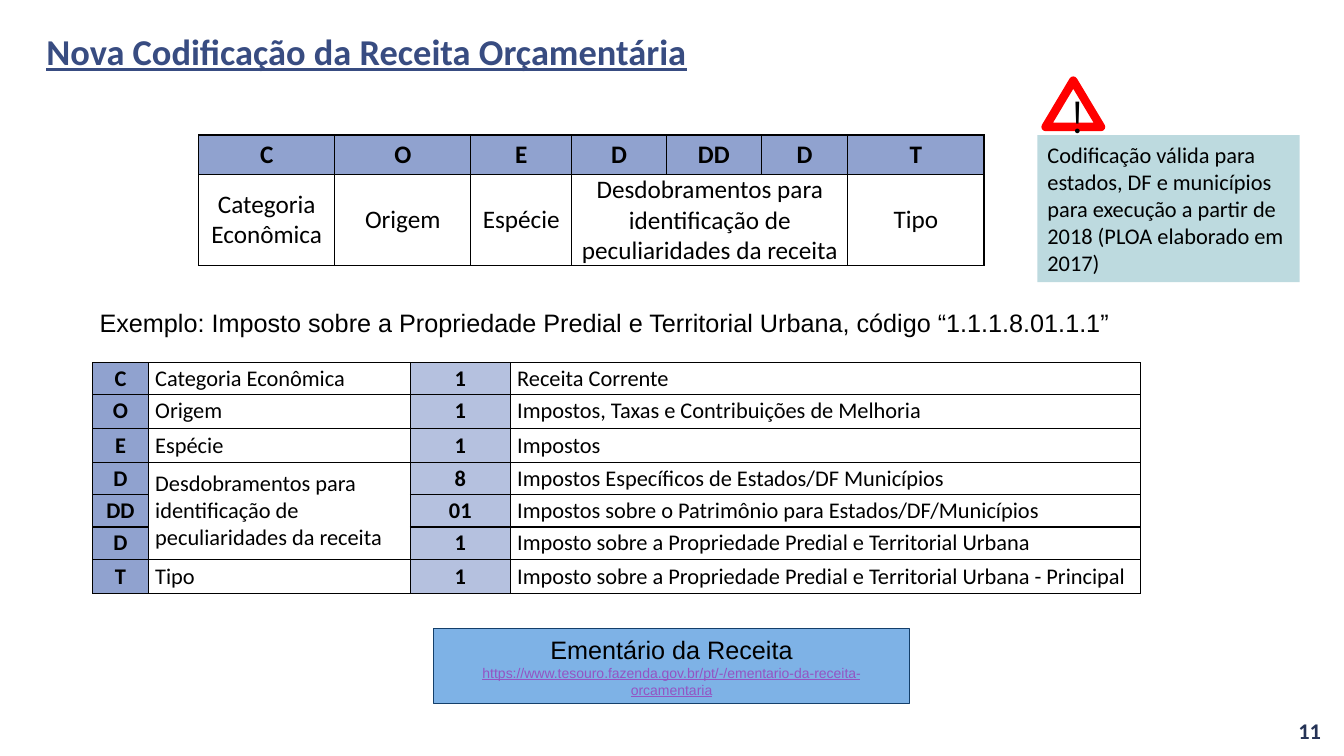
from lxml import etree
from pptx import Presentation
from pptx.dml.color import RGBColor
from pptx.enum.shapes import MSO_SHAPE
from pptx.enum.text import MSO_ANCHOR, PP_ALIGN
from pptx.oxml.ns import qn
from pptx.util import Emu, Pt

EMU_PER_PX = 9144
LEFT, CENTER, RIGHT, JUSTIFY = PP_ALIGN.LEFT, PP_ALIGN.CENTER, PP_ALIGN.RIGHT, PP_ALIGN.JUSTIFY
TOP, MIDDLE = MSO_ANCHOR.TOP, MSO_ANCHOR.MIDDLE
RECTANGLE, TRIANGLE = MSO_SHAPE.RECTANGLE, MSO_SHAPE.ISOSCELES_TRIANGLE
TITLE_ONLY = 5

COLORS = {
    "black": "000000",
    "white": "FFFFFF",
    "title": "384C81",
    "number": "253356",
    "code": "90A2CF",
    "value": "B5C1DF",
    "note": "BDDADF",
    "source": "7EB2E6",
    "source_line": "143F6A",
    "link": "9454C3",
    "warning": "FF0000",
}

BREAKDOWN = "Desdobramentos para\nidentificação de\npeculiaridades da receita"
CODES = ["C", "O", "E", "D", "DD", "D", "T"]
MEANINGS = ["Categoria Econômica", "Origem", "Espécie", BREAKDOWN, "", "", "Tipo"]
EXAMPLE_VALUES = ["1", "1", "1", "8", "01", "1", "1"]
EXAMPLE_NAMES = [
    "Receita Corrente",
    "Impostos, Taxas e Contribuições de Melhoria",
    "Impostos",
    "Impostos Específicos de Estados/DF Municípios",
    "Impostos sobre o Patrimônio para Estados/DF/Municípios",
    "Imposto sobre a Propriedade Predial e Territorial Urbana",
    "Imposto sobre a Propriedade Predial e Territorial Urbana - Principal",
]


def px(value):
    return Emu(value * EMU_PER_PX)


def rgb(name):
    return RGBColor.from_string(COLORS[name])


def format_paragraph(paragraph, size, font="Calibri", color="black", bold=False,
                     underline=False, align=LEFT):
    paragraph.alignment = align
    for run in paragraph.runs:
        run.font.name = font
        run.font.size = Pt(size)
        run.font.bold = bold
        run.font.underline = underline
        run.font.color.rgb = rgb(color)


def write_text(text_frame, text, size, anchor=TOP, **style):
    text_frame.text = text
    text_frame.word_wrap = True
    text_frame.vertical_anchor = anchor
    for paragraph in text_frame.paragraphs:
        format_paragraph(paragraph, size, **style)


def add_text(shapes, box, text, size, **style):
    shape = shapes.add_textbox(*map(px, box))
    write_text(shape.text_frame, text, size, **style)


def add_shape(shapes, kind, box, fill, line=None, line_width=0):
    shape = shapes.add_shape(kind, *map(px, box))
    shape.shadow.inherit = False
    shape.fill.solid()
    shape.fill.fore_color.rgb = rgb(fill)
    if line:
        shape.line.color.rgb = rgb(line)
        shape.line.width = Pt(line_width)
    else:
        shape.line.fill.background()
    return shape


def add_borders(cell):
    properties = cell._tc.get_or_add_tcPr()
    for side in ("lnL", "lnR", "lnT", "lnB"):
        border = etree.SubElement(properties, qn(f"a:{side}"), w=str(Pt(1)))
        fill = etree.SubElement(border, qn("a:solidFill"))
        etree.SubElement(fill, qn("a:srgbClr"), val=COLORS["black"])


def format_cell(cell, text, size, fill, align):
    add_borders(cell)
    cell.margin_left = cell.margin_right = px(7)
    cell.margin_top = cell.margin_bottom = 0
    cell.vertical_anchor = MIDDLE
    if fill:
        cell.fill.solid()
        cell.fill.fore_color.rgb = rgb(fill)
    else:
        cell.fill.background()
    write_text(cell.text_frame, text, size, anchor=MIDDLE, bold=bool(fill), align=align)


def add_table(slide, left, top, widths, heights, rows, size, cell_style):
    frame = slide.shapes.add_table(len(heights), len(widths), px(left), px(top),
                                   px(sum(widths)), px(sum(heights)))
    table = frame.table
    table.first_row = table.horz_banding = False
    for column, width in zip(table.columns, widths):
        column.width = px(width)
    for row, height in zip(table.rows, heights):
        row.height = px(height)
    for row_index, texts in enumerate(rows):
        for column_index, text in enumerate(texts):
            fill, align = cell_style(row_index, column_index)
            format_cell(table.cell(row_index, column_index), text, size, fill, align)
    return table


def structure_style(row, column):
    return ("code" if row == 0 else None), CENTER


def example_style(row, column):
    fill = ("code", None, "value", None)[column]
    return fill, CENTER if fill else JUSTIFY


def add_title(slide, text):
    title = slide.shapes.title
    title.left, title.top, title.width, title.height = map(px, (36, -19, 1150, 145))
    write_text(title.text_frame, text, 26, anchor=MIDDLE, color="title",
               bold=True, underline=True)
    title.text_frame.paragraphs[0].line_spacing = 0.9


def add_source(slide):
    source = add_shape(slide.shapes, RECTANGLE, (430, 624, 472, 74),
                       "source", "source_line", 0.75)
    address = "https://www.tesouro.fazenda.gov.br/pt/-/ementario-da-receita-orcamentaria"
    write_text(source.text_frame, f"Ementário da Receita\n{address}", 18,
               font="Arial", align=CENTER)
    format_paragraph(source.text_frame.paragraphs[1], 10, font="Arial", color="link",
                     underline=True, align=CENTER)


def add_warning(slide):
    sign = slide.shapes.add_group_shape().shapes
    add_shape(sign, TRIANGLE, (1037, 80, 55, 46), "white", "warning", 6)
    add_text(sign, (1053, 83, 23, 64), "!", 32, font="Montserrat", align=CENTER)
    note = add_shape(slide.shapes, RECTANGLE, (1029, 134, 260, 146), "note")
    write_text(note.text_frame,
               "Codificação válida para estados, DF e municípios para execução "
               "a partir de 2018 (PLOA elaborado em 2017)", 16, anchor=MIDDLE)


def main():
    presentation = Presentation()
    presentation.slide_width, presentation.slide_height = px(1333), px(750)
    slide = presentation.slides.add_slide(presentation.slide_layouts[TITLE_ONLY])
    add_title(slide, "Nova Codificação da Receita Orçamentária")
    add_text(slide.shapes, (1020, 705, 300, 40), "11", 16, anchor=MIDDLE,
             color="number", bold=True, align=RIGHT)

    structure = add_table(slide, 197, 134, [135, 135, 100, 94, 94, 86, 135], [39, 79],
                          [CODES, MEANINGS], 18, structure_style)
    structure.cell(1, 3).merge(structure.cell(1, 5))

    example_rows = list(zip(CODES, MEANINGS, EXAMPLE_VALUES, EXAMPLE_NAMES))
    example = add_table(slide, 92, 360, [55, 260, 99, 625], [31, 34, 34, 32, 32, 32, 34],
                        example_rows, 16, example_style)
    example.cell(3, 1).merge(example.cell(5, 1))

    add_text(slide.shapes, (68, 300, 1063, 40),
             "Exemplo: Imposto sobre a Propriedade Predial e Territorial Urbana, "
             "código “1.1.1.8.01.1.1”", 18, font="Arial", align=CENTER)
    add_source(slide)
    add_warning(slide)
    presentation.save("out.pptx")


if __name__ == "__main__":
    main()
